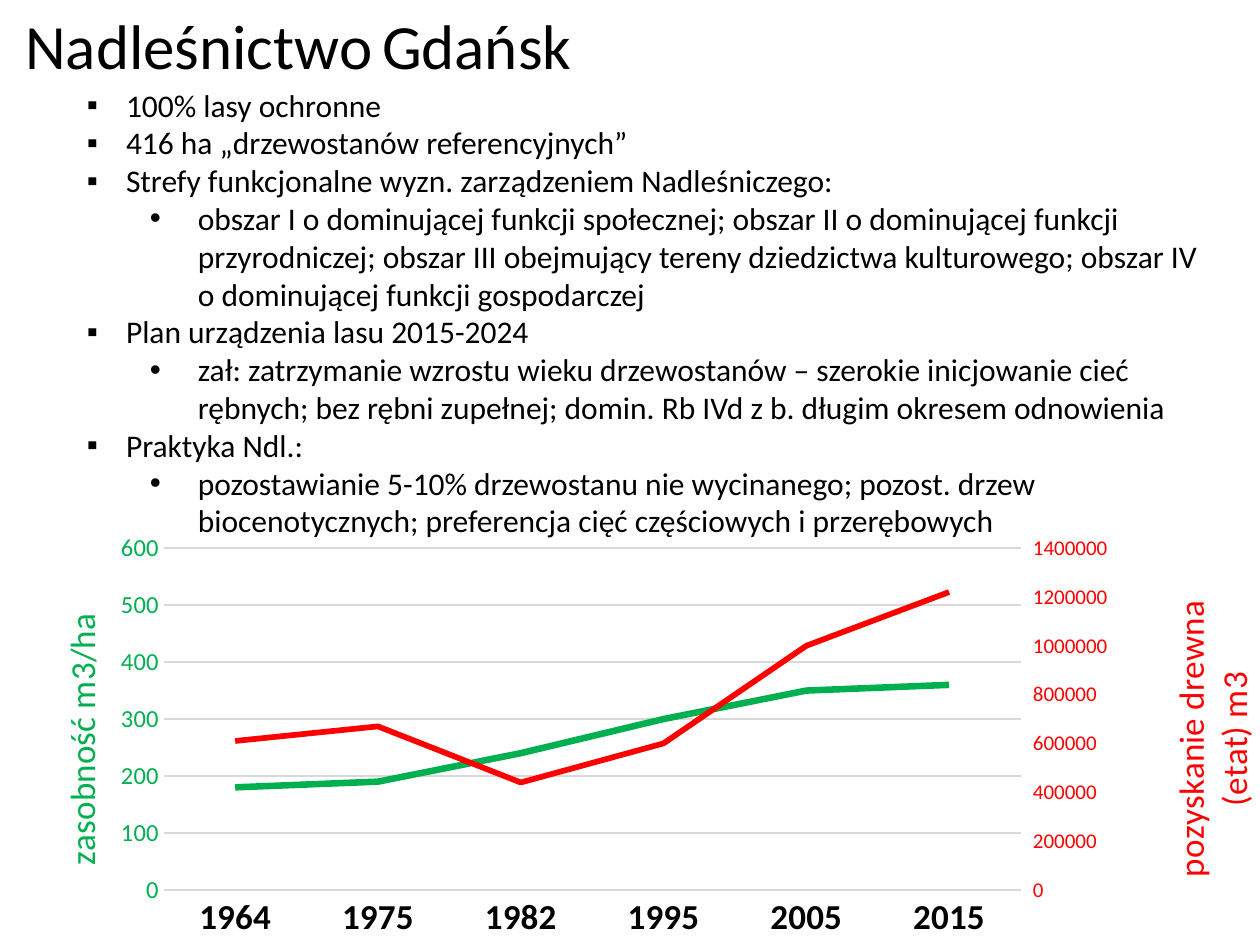
from copy import deepcopy

from lxml.etree import SubElement
from pptx import Presentation
from pptx.chart.axis import CategoryAxis, ValueAxis
from pptx.chart.data import CategoryChartData
from pptx.dml.color import RGBColor
from pptx.enum.chart import XL_CHART_TYPE, XL_TICK_MARK
from pptx.enum.text import MSO_ANCHOR, MSO_AUTO_SIZE, PP_ALIGN
from pptx.oxml import parse_xml
from pptx.oxml.ns import nsdecls, qn
from pptx.util import Inches, Pt

# Content
TITLE = [("Nadleśnictwo", 36), (" ", 24), ("Gdańsk", 36)]
POINTS = [
    (0, "100% lasy ochronne"),
    (0, "416 ha „drzewostanów referencyjnych”"),
    (0, "Strefy funkcjonalne wyzn. zarządzeniem Nadleśniczego:"),
    (1, "obszar I o dominującej funkcji społecznej; obszar II o dominującej funkcji "
        "przyrodniczej; obszar III obejmujący tereny dziedzictwa kulturowego; "
        "obszar IV o dominującej funkcji gospodarczej"),
    (0, "Plan urządzenia lasu 2015-2024"),
    (1, "zał: zatrzymanie wzrostu wieku drzewostanów – szerokie inicjowanie cieć "
        "rębnych; bez rębni zupełnej; domin. Rb IVd z b. długim okresem odnowienia"),
    (0, "Praktyka Ndl.:"),
    (1, "pozostawianie 5-10% drzewostanu nie wycinanego; pozost. drzew "
        "biocenotycznych; preferencja cięć częściowych i przerębowych"),
]
YEARS = ["1964", "1975", "1982", "1995", "2005", "2015"]
SERIES = [
    {"name": "zasobność", "values": [180, 190, 240, 300, 350, 360],
     "color": "green", "width": 3.75},
    {"name": "pozyskanie", "values": [610000, 670000, 440000, 600000, 1000000, 1220000],
     "color": "red", "width": 3.25},
]
LEFT_AXIS = {"title": "zasobność m3/ha", "color": "green", "size": 14,
             "scale": {"minimum_scale": 0, "maximum_scale": 600, "major_unit": 100,
                       "major_tick_mark": XL_TICK_MARK.NONE},
             "place": {"x": 0.03, "y": 0.2}}
RIGHT_AXIS = {"title": "pozyskanie drewna (etat) m3", "color": "red", "size": 12,
              "scale": {"minimum_scale": 0, "maximum_scale": 1400000, "major_unit": 200000,
                        "major_tick_mark": XL_TICK_MARK.OUTSIDE},
              "place": {"x": 0.91, "y": 0.17}}

# Style
FONT = "Calibri"
COLORS = {"black": "000000", "green": "00B050", "red": "FF0000", "grid": "D9D9D9"}
BULLETS = [("▪", 0.31, 0.31), ("•", 0.88, 0.38)]  # sign, indent, hanging
PLOT = {"x": 0.12, "y": 0.06, "w": 0.68, "h": 0.81}


def color(name):
    return RGBColor.from_string(COLORS[name])


def set_font(font, size, name="black", bold=False):
    for key, value in {"name": FONT, "size": Pt(size), "bold": bold}.items():
        setattr(font, key, value)
    font.color.rgb = color(name)


def set_line(line, name, width):
    line.color.rgb = color(name)
    line.width = Pt(width)


def place(shape, left, top, width, height):
    for key, value in {"left": left, "top": top, "width": width, "height": height}.items():
        setattr(shape, key, Inches(value))


def set_frame(frame, wrap):
    values = {"word_wrap": wrap, "auto_size": MSO_AUTO_SIZE.NONE,
              "vertical_anchor": MSO_ANCHOR.TOP}
    for key, value in values.items():
        setattr(frame, key, value)


def set_layout(parent, index, fractions):
    """Give a chart part a fixed place, in fractions of the chart."""
    for old in parent.findall(qn("c:layout")):
        parent.remove(old)
    layout = parse_xml(f"<c:layout {nsdecls('c')}><c:manualLayout/></c:layout>")
    manual = layout[0]
    if "w" in fractions:
        SubElement(manual, qn("c:layoutTarget")).set("val", "inner")
    for side in "xy":
        SubElement(manual, qn(f"c:{side}Mode")).set("val", "edge")
    for key, value in fractions.items():
        SubElement(manual, qn(f"c:{key}")).set("val", str(value))
    parent.insert(index, layout)


def format_value_axis(axis, style):
    for key, value in style["scale"].items():
        setattr(axis, key, value)
    axis.format.line.fill.background()
    set_font(axis.tick_labels.font, style["size"], style["color"])
    axis.tick_labels.number_format = "General"
    axis.tick_labels.number_format_is_linked = False
    frame = axis.axis_title.text_frame
    run = frame.paragraphs[0].add_run()
    run.text = style["title"]
    set_font(run.font, 20, style["color"])
    title = axis.axis_title._element
    body = title.find(".//" + qn("a:bodyPr"))
    body.set("rot", "-5400000")
    body.set("vert", "horz")
    set_layout(title, 1, style["place"])


def add_right_axis(chart):
    """Move the second series to its own line plot with an axis on the right."""
    plot_area = chart._chartSpace.find(".//" + qn("c:plotArea"))
    first, category, value = (plot_area.find(qn(f"c:{tag}"))
                              for tag in ("lineChart", "catAx", "valAx"))
    second, right_category, right_value = map(deepcopy, (first, category, value))
    first.remove(first.findall(qn("c:ser"))[1])
    second.remove(second.findall(qn("c:ser"))[0])
    first.addnext(second)
    value.addnext(right_value)
    right_value.addnext(right_category)
    for element, number in zip(second.findall(qn("c:axId")), ("5001", "5002")):
        element.set("val", number)
    for axis, own, other in ((right_category, "5001", "5002"), (right_value, "5002", "5001")):
        axis.find(qn("c:axId")).set("val", own)
        axis.find(qn("c:crossAx")).set("val", other)
    right_value.find(qn("c:axPos")).set("val", "r")
    right_value.find(qn("c:crosses")).set("val", "max")
    CategoryAxis(right_category).visible = False
    axis = ValueAxis(right_value)
    axis.has_major_gridlines = False
    return axis


presentation = Presentation()
presentation.slide_width, presentation.slide_height = Inches(10), Inches(7.5)
slide = presentation.slides.add_slide(presentation.slide_layouts[1])
title, body = slide.placeholders

# Title
place(title, 0.1, 0, 4.58, 1.11)
set_frame(title.text_frame, False)
paragraph = title.text_frame.paragraphs[0]
paragraph.alignment = PP_ALIGN.LEFT
for text, size in TITLE:
    run = paragraph.add_run()
    run.text = text
    set_font(run.font, size)

# Bullet list
place(body, 0.59, 0.63, 9.17, 3.74)
frame = body.text_frame
set_frame(frame, True)
for number, (level, text) in enumerate(POINTS):
    paragraph = frame.add_paragraph() if number else frame.paragraphs[0]
    paragraph.level = level
    paragraph.space_before = Pt(0)
    sign, indent, hanging = BULLETS[level]
    properties = paragraph._p.get_or_add_pPr()
    properties.set("marL", str(Inches(indent)))
    properties.set("indent", str(-Inches(hanging)))
    SubElement(properties, qn("a:buFont")).set("typeface", "Arial")
    SubElement(properties, qn("a:buChar")).set("char", sign)
    run = paragraph.add_run()
    run.text = text
    set_font(run.font, 18)

# Chart
data = CategoryChartData()
data.categories = YEARS
for series in SERIES:
    data.add_series(series["name"], series["values"])
chart = slide.shapes.add_chart(XL_CHART_TYPE.LINE, Inches(0.1), Inches(4.15),
                               Inches(10), Inches(3.35), data).chart
chart.has_legend = chart.has_title = False
set_font(chart.font, 10)
chart.plots[0].vary_by_categories = False
for series, style in zip(chart.plots[0].series, SERIES):
    series.smooth = False
    set_line(series.format.line, style["color"], style["width"])

category_axis = chart.category_axis
category_axis.major_tick_mark = XL_TICK_MARK.NONE
set_font(category_axis.tick_labels.font, 20, bold=True)
set_line(category_axis.format.line, "grid", 0.75)

# chart.value_axis means another axis once there are two, so hold the left one first
left_axis = chart.value_axis
set_line(left_axis.major_gridlines.format.line, "grid", 0.75)
right_axis = add_right_axis(chart)
format_value_axis(left_axis, LEFT_AXIS)
format_value_axis(right_axis, RIGHT_AXIS)
set_layout(chart._chartSpace.find(".//" + qn("c:plotArea")), 0, PLOT)

presentation.save("out.pptx")
